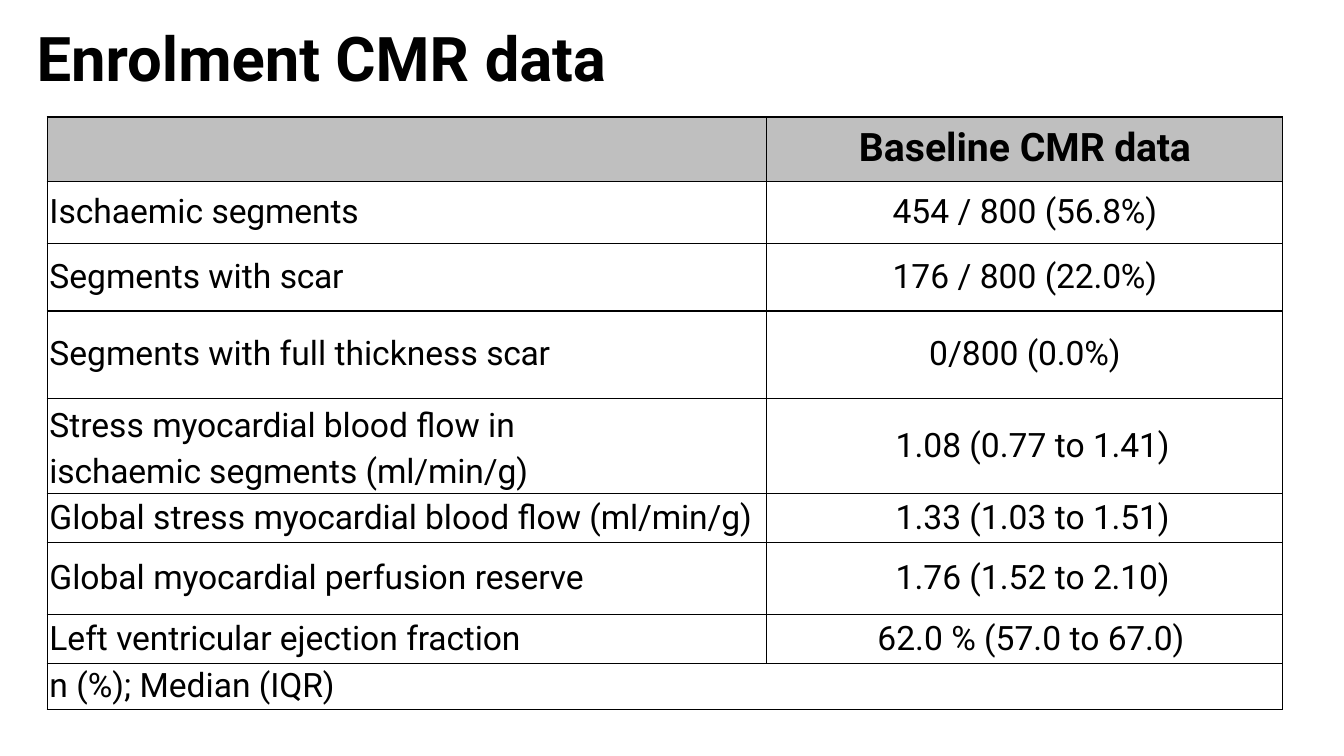
from lxml.etree import SubElement
from pptx import Presentation
from pptx.dml.color import RGBColor as Color
from pptx.enum.text import MSO_AUTO_SIZE as AutoSize, PP_ALIGN as Align
from pptx.oxml import parse_xml
from pptx.oxml.ns import nsdecls, qn
from pptx.util import Pt

COLORS = {"ink": "000000", "header": "BFBFBF"}
FONT = "Roboto"
COLUMN_WIDTHS = [514, 368.6]
LABEL_INDENT = 1.5
WRAP_MARGIN = 130

# Text is split at "|"; every second run is set slightly tighter.
MEASURES = [
    # height, space above label, label, tightening, value, space above value, value indent
    (44.5, 8.1, "Ischaemic |segments", 0.1, "454 / 800 |(56.8%)", 8.1, None),
    (48.3, 9.7, "Segments with |scar", 0.2, "176 / 800 |(22.0%)", 9.7, None),
    (62.4, 16.9, "Segments with full thickness |scar", 0.2, "0/800 |(0.0%)", 16.9, None),
    (68, 0.7, "Stress |myocardial |blood flow in |ischaemic |segments |(ml/min/g)", 0.1,
     "1.08 (0.77 to |1.41)", 19.8, 92),
    (35.1, 3.2, "Global stress |myocardial |blood flow |(ml/min/g)", 0.1,
     "1.33 (1.03 to |1.51)", 3.2, 92),
    (51.3, 11.3, "Global |myocardial |perfusion |reserve", 0.1, "1.76 (1.52 to |2.10)", 11.3, 92),
    (35.1, 3.1, "Left |ventricular |ejection |fraction", 0.1, "62.0 % (57.0 to |67.0)", 3.1, 79),
]
HEADER_HEIGHT = 45.9
FOOTNOTE_HEIGHT = 32.6


def write_runs(para, text, size, bold=False, tighten=0.1):
    for index, part in enumerate(text.split("|")):
        span = para.add_run()
        span.text = part
        span.font.name = FONT
        span.font.size = Pt(size)
        span.font.bold = bold
        span.font.color.rgb = Color.from_string(COLORS["ink"])
        if index % 2:
            span.font._element.set("spc", str(round(-100 * tighten)))


def set_indent(para, indent):
    properties = para._p.get_or_add_pPr()
    properties.set("marL", str(Pt(indent)))
    properties.set("indent", "0")


def add_title(page, text):
    box = page.shapes.add_textbox(Pt(25.2), Pt(13), Pt(635.8), Pt(54.7))
    frame = box.text_frame
    frame.word_wrap = True
    frame.auto_size = AutoSize.SHAPE_TO_FIT_TEXT
    frame.margin_left = frame.margin_right = frame.margin_bottom = Pt(0)
    frame.margin_top = Pt(1)
    para = frame.paragraphs[0]
    para.space_before = Pt(1)
    set_indent(para, 1)
    write_runs(para, text, 44, bold=True, tighten=0.2)


def style_cell(cell, fill=None):
    cell.margin_left = cell.margin_right = cell.margin_top = cell.margin_bottom = Pt(0)
    if fill:
        cell.fill.solid()
        cell.fill.fore_color.rgb = Color.from_string(COLORS[fill])
    else:
        cell.fill.background()
    properties = cell._tc.get_or_add_tcPr()
    for position, side in enumerate(("lnL", "lnR", "lnT", "lnB")):
        border = parse_xml(f'<a:{side} {nsdecls("a")} w="{Pt(1)}"/>')
        paint = SubElement(border, qn("a:solidFill"))
        SubElement(paint, qn("a:srgbClr"), val=COLORS["ink"])
        properties.insert(position, border)


def write_cell(cell, text, space, indent=None, size=24, bold=False, tighten=0.1):
    cell.margin_top = Pt(space)
    para = cell.text_frame.paragraphs[0]
    para.space_before = Pt(space)
    if indent is None:
        para.alignment = Align.CENTER
    else:
        para.alignment = Align.LEFT
        set_indent(para, indent)
    write_runs(para, text, size, bold, tighten)
    return para


def add_cmr_table(page):
    heights = [HEADER_HEIGHT, *(measure[0] for measure in MEASURES), FOOTNOTE_HEIGHT]
    frame = page.shapes.add_table(len(heights), len(COLUMN_WIDTHS), Pt(33.8), Pt(83.5),
                                  Pt(sum(COLUMN_WIDTHS)), Pt(sum(heights)))
    table = frame.table
    table.first_row = table.horz_banding = False
    for column, width in zip(table.columns, COLUMN_WIDTHS):
        column.width = Pt(width)
    for index, (row, height) in enumerate(zip(table.rows, heights)):
        row.height = Pt(height)
        for cell in row.cells:
            style_cell(cell, "header" if index == 0 else None)

    write_cell(table.cell(0, 1), "Baseline CMR |data", 6, size=28, bold=True, tighten=0.2)
    for index, measure in enumerate(MEASURES, start=1):
        height, label_space, label, tighten, value, value_space, value_indent = measure
        label_cell = table.cell(index, 0)
        para = write_cell(label_cell, label, label_space, LABEL_INDENT, tighten=tighten)
        if "ischaemic" in label:
            para.line_spacing = Pt(33.1)
            label_cell.margin_right = Pt(WRAP_MARGIN)
        write_cell(table.cell(index, 1), value, value_space, value_indent)

    footnote = table.cell(len(heights) - 1, 0)
    footnote.merge(table.cell(len(heights) - 1, 1))
    write_cell(footnote, "n (%); Median |(IQR)", 2, LABEL_INDENT)


def main():
    deck = Presentation()
    deck.slide_width, deck.slide_height = Pt(960), Pt(540)
    page = deck.slides.add_slide(deck.slide_layouts[6])
    add_title(page, "Enrolment CMR |data")
    add_cmr_table(page)
    deck.save("out.pptx")


if __name__ == "__main__":
    main()
